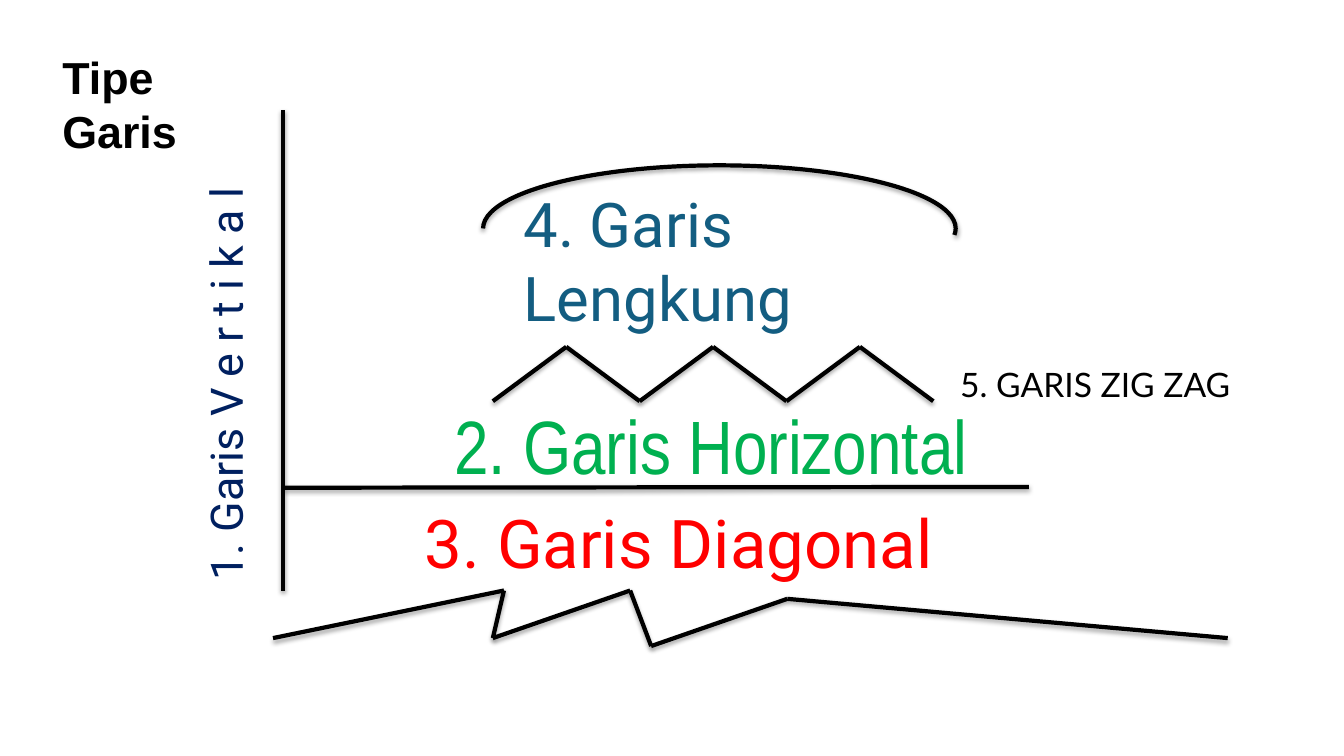
from dataclasses import dataclass
from itertools import pairwise

from lxml import etree
from pptx import Presentation
from pptx.dml.color import RGBColor
from pptx.enum.shapes import MSO_CONNECTOR, MSO_SHAPE
from pptx.enum.text import MSO_AUTO_SIZE
from pptx.oxml.ns import qn
from pptx.util import Cm, Pt

STRAIGHT = MSO_CONNECTOR.STRAIGHT
ARC = MSO_SHAPE.ARC
GROW = MSO_AUTO_SIZE.SHAPE_TO_FIT_TEXT

BLACK = RGBColor(0x00, 0x00, 0x00)
NAVY = RGBColor(0x00, 0x20, 0x60)
GREEN = RGBColor(0x00, 0xB0, 0x50)
RED = RGBColor(0xFF, 0x00, 0x00)
TEAL = RGBColor(0x13, 0x5D, 0x81)

Point = tuple[float, float]


@dataclass
class Label:
    text: str
    left: float
    top: float
    width: float
    height: float
    font: str
    size: int
    color: RGBColor
    bold: bool = False
    rotation: int = 0


LABELS = [
    Label("Tipe Garis", 1.32, 1.14, 5.72, 1.63, "Arial", 32, BLACK, bold=True),
    Label("1. Garis V e r t i k a l", 0.03, 8.41, 11.3, 1.63, "Roboto", 32, NAVY, rotation=270),
    Label("2. Garis Horizontal", 11.2, 9.93, 15.88, 2.57, "Arial Narrow", 54, GREEN),
    Label("3. Garis Diagonal", 10.46, 12.5, 25.12, 2.31, "Roboto", 48, RED),
    Label("4. Garis Lengkung", 12.95, 4.57, 11.1, 4.01, "Roboto", 44, TEAL),
    Label("5. GARIS ZIG ZAG", 23.95, 9.04, 11.1, 1.27, "Lato", 24, BLACK),
]

VERTICAL = [(7.14, 14.88), (7.14, 2.77)]
HORIZONTAL = [(7.16, 12.29), (25.93, 12.27)]
DIAGONAL = [(6.88, 16.08), (12.7, 14.88), (12.42, 16.08), (15.88, 14.88),
            (16.41, 16.28), (19.84, 15.09), (30.94, 16.08)]

# Zigzag: seven evenly spaced points, alternating low and high
ZIGZAG_LEFT, ZIGZAG_STEP = 12.42, 1.85
ZIGZAG_LOW, ZIGZAG_HIGH = 10.11, 8.74
ZIGZAG = [(ZIGZAG_LEFT + i * ZIGZAG_STEP, ZIGZAG_HIGH if i % 2 else ZIGZAG_LOW)
          for i in range(7)]


def style_stroke(shape) -> None:
    """Black 3 pt line with a soft shadow straight below."""
    shape.line.color.rgb = BLACK
    shape.line.width = Pt(3)
    effects = etree.SubElement(shape._element.spPr, qn("a:effectLst"))
    shadow = etree.SubElement(effects, qn("a:outerShdw"), blurRad="40000",
                              dist="23000", dir="5400000", rotWithShape="0")
    color = etree.SubElement(shadow, qn("a:srgbClr"), val=str(BLACK))
    etree.SubElement(color, qn("a:alpha"), val="35000")


def add_path(s, points: list[Point]) -> None:
    for (x1, y1), (x2, y2) in pairwise(points):
        style_stroke(s.shapes.add_connector(STRAIGHT, Cm(x1), Cm(y1), Cm(x2), Cm(y2)))


def add_curve(s) -> None:
    arc = s.shapes.add_shape(ARC, Cm(16.54), Cm(-0.2), Cm(3.18), Cm(11.91))
    arc.rotation = 270
    arc.adjustments[0] = 162
    arc.adjustments[1] = 54.95
    arc.fill.background()
    style_stroke(arc)


def add_label(s, label: Label) -> None:
    sp = s.shapes.add_textbox(Cm(label.left), Cm(label.top), Cm(label.width), Cm(label.height))
    sp.rotation = label.rotation
    tf = sp.text_frame
    tf.word_wrap = True
    tf.auto_size = GROW
    r = tf.paragraphs[0].add_run()
    r.text = label.text
    r.font.name = label.font
    r.font.size = Pt(label.size)
    r.font.bold = label.bold
    r.font.color.rgb = label.color


def main() -> None:
    prs = Presentation()
    prs.slide_width, prs.slide_height = Cm(33.87), Cm(19.05)
    s = prs.slides.add_slide(prs.slide_layouts[6])

    # Title and the names of the line types
    for label in LABELS:
        add_label(s, label)

    # Sample lines
    for points in (VERTICAL, HORIZONTAL, DIAGONAL, ZIGZAG):
        add_path(s, points)
    add_curve(s)

    prs.save("out.pptx")


if __name__ == "__main__":
    main()
